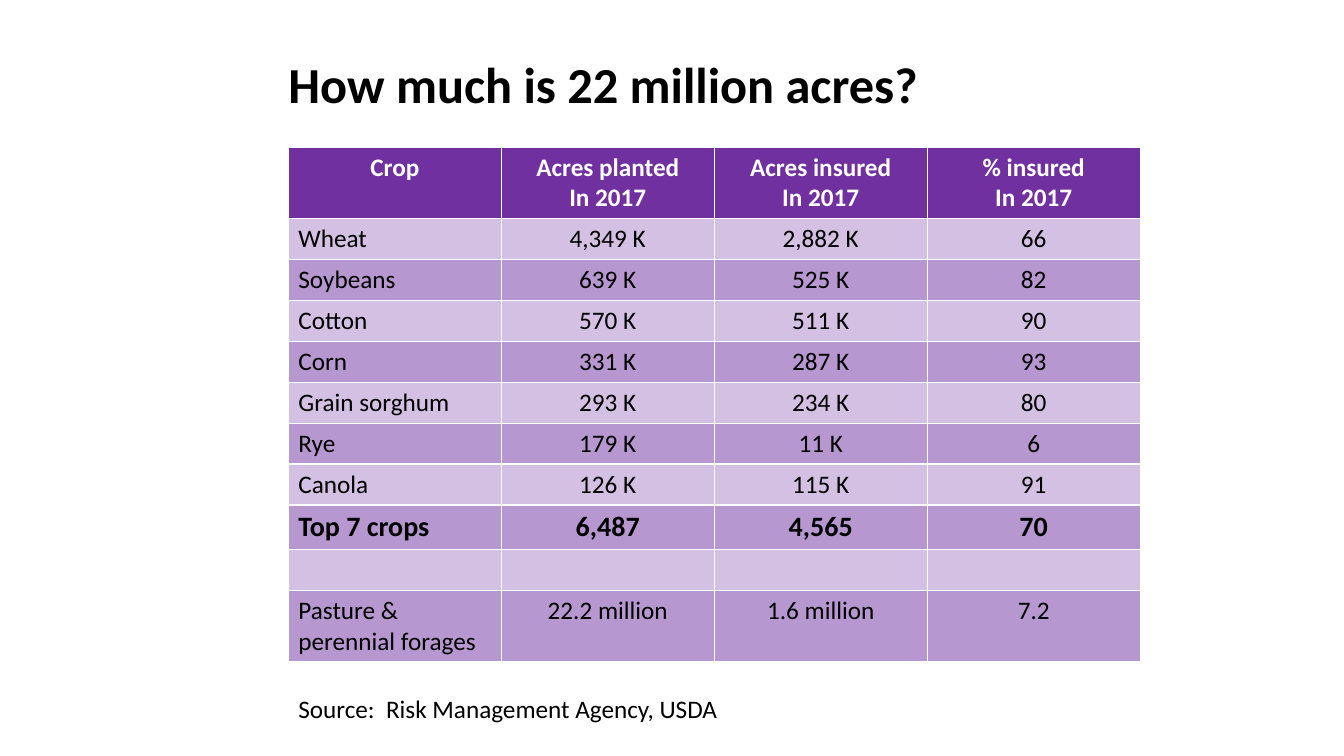
from dataclasses import dataclass

import pptx
import pptx.dml.color
import pptx.enum.text
import pptx.oxml
import pptx.oxml.ns
import pptx.util

Inches = pptx.util.Inches
Align = pptx.enum.text.PP_ALIGN
FONT = "Calibri"
BLACK, WHITE, PURPLE = "000000", "FFFFFF", "7030A0"


@dataclass(frozen=True)
class CropRow:
    texts: tuple[str, str, str, str]
    height: float = 0.38
    size: int = 18
    bold: bool = False
    text_color: str = BLACK


HEADER = CropRow(
    ("Crop", "Acres planted\nIn 2017", "Acres insured\nIn 2017", "% insured\nIn 2017"),
    height=0.66, bold=True, text_color=WHITE,
)
CROPS = (
    CropRow(("Wheat", "4,349 K", "2,882 K", "66")),
    CropRow(("Soybeans", "639 K", "525 K", "82")),
    CropRow(("Cotton", "570 K", "511 K", "90")),
    CropRow(("Corn", "331 K", "287 K", "93")),
    CropRow(("Grain sorghum", "293 K", "234 K", "80")),
    CropRow(("Rye", "179 K", "11 K", "6")),
    CropRow(("Canola", "126 K", "115 K", "91")),
    CropRow(("Top 7 crops", "6,487", "4,565", "70"), height=0.41, size=20, bold=True),
    CropRow(("", "", "", "")),
    CropRow(("Pasture & perennial forages", "22.2 million", "1.6 million", "7.2"), height=0.66),
)


def rgb(color: str) -> pptx.dml.color.RGBColor:
    return pptx.dml.color.RGBColor.from_string(color)


def add_run(paragraph, text: str, size: int, color: str = BLACK, bold: bool = False) -> None:
    run = paragraph.add_run()
    run.text = text
    run.font.name = FONT
    run.font.size = pptx.util.Pt(size)
    run.font.bold = bold
    run.font.color.rgb = rgb(color)


def fill_cell(cell, opacity: int) -> None:
    cell.fill.solid()
    cell.fill.fore_color.rgb = rgb(PURPLE)
    if opacity < 100:
        tint = cell._tc.tcPr.find(".//" + pptx.oxml.ns.qn("a:srgbClr"))
        alpha = pptx.oxml.parse_xml(
            f'<a:alpha {pptx.oxml.ns.nsdecls("a")} val="{opacity * 1000}"/>'
        )
        tint.append(alpha)


def write_cell(cell, text: str, row: CropRow, alignment: Align) -> None:
    for index, line in enumerate(text.split("\n")):
        paragraph = cell.text_frame.paragraphs[0] if index == 0 else cell.text_frame.add_paragraph()
        paragraph.alignment = alignment
        if line:
            add_run(paragraph, line, row.size, row.text_color, row.bold)


def add_title(slide) -> None:
    title = slide.shapes.title
    title.left, title.top = Inches(2.76), Inches(0.24)
    title.width, title.height = Inches(9), Inches(1.25)
    frame = title.text_frame
    frame.auto_size = pptx.enum.text.MSO_AUTO_SIZE.NONE
    frame.vertical_anchor = pptx.enum.text.MSO_ANCHOR.MIDDLE
    heading = frame.paragraphs[0]
    heading.alignment = Align.LEFT
    heading.line_spacing = 0.9
    add_run(heading, "How much is 22 million acres?", 36, bold=True)


def add_crop_table(slide) -> None:
    rows = (HEADER, *CROPS)
    crop_frame = slide.shapes.add_table(
        len(rows), len(HEADER.texts), Inches(2.86), Inches(1.46), Inches(8.45), Inches(5.03)
    )
    crops = crop_frame.table
    for row_index, row in enumerate(rows):
        crops.rows[row_index].height = Inches(row.height)
        opacity = 100 if row is HEADER else 30 if row_index % 2 else 50
        for column, text in enumerate(row.texts):
            cell = crops.cell(row_index, column)
            fill_cell(cell, opacity)
            is_crop_name = column == 0 and row is not HEADER
            write_cell(cell, text, row, Align.LEFT if is_crop_name else Align.CENTER)
    crop_frame.height = Inches(5.03)


def add_source(slide) -> None:
    source = slide.shapes.add_textbox(Inches(2.86), Inches(6.83), Inches(4.41), Inches(0.4))
    source.text_frame.word_wrap = False
    source.text_frame.auto_size = pptx.enum.text.MSO_AUTO_SIZE.SHAPE_TO_FIT_TEXT
    add_run(source.text_frame.paragraphs[0], "Source:  Risk Management Agency, USDA", 18)


def main() -> None:
    presentation = pptx.Presentation()
    presentation.slide_width, presentation.slide_height = Inches(13.33), Inches(7.5)
    slide = presentation.slides.add_slide(presentation.slide_layouts[5])
    add_title(slide)
    add_crop_table(slide)
    add_source(slide)
    presentation.save("out.pptx")


if __name__ == "__main__":
    main()
